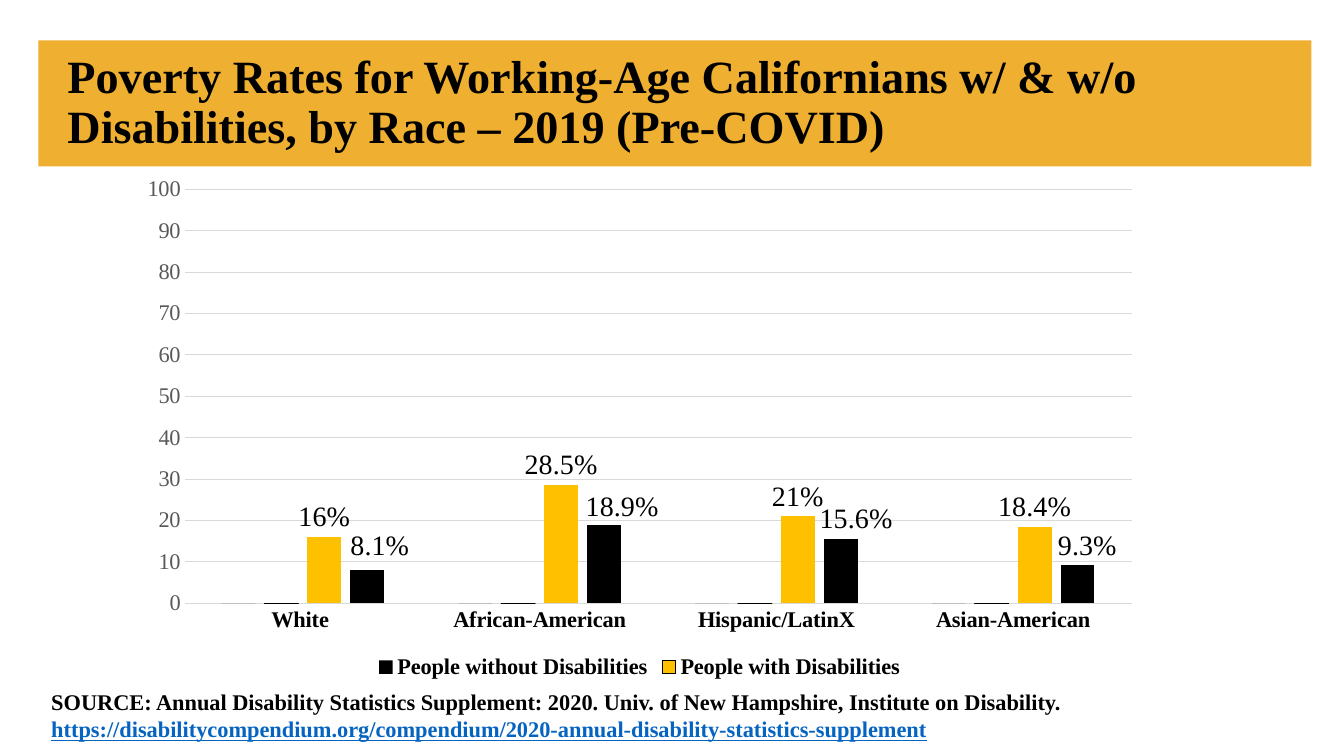
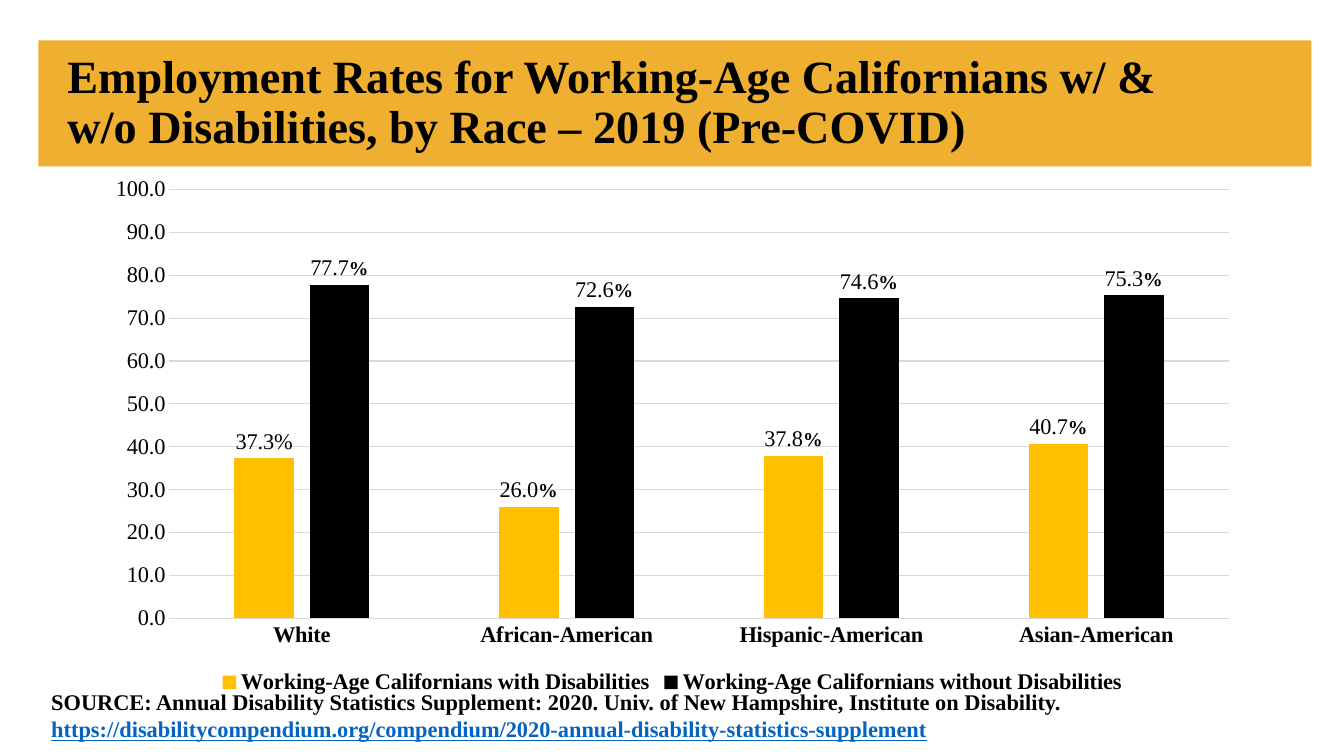
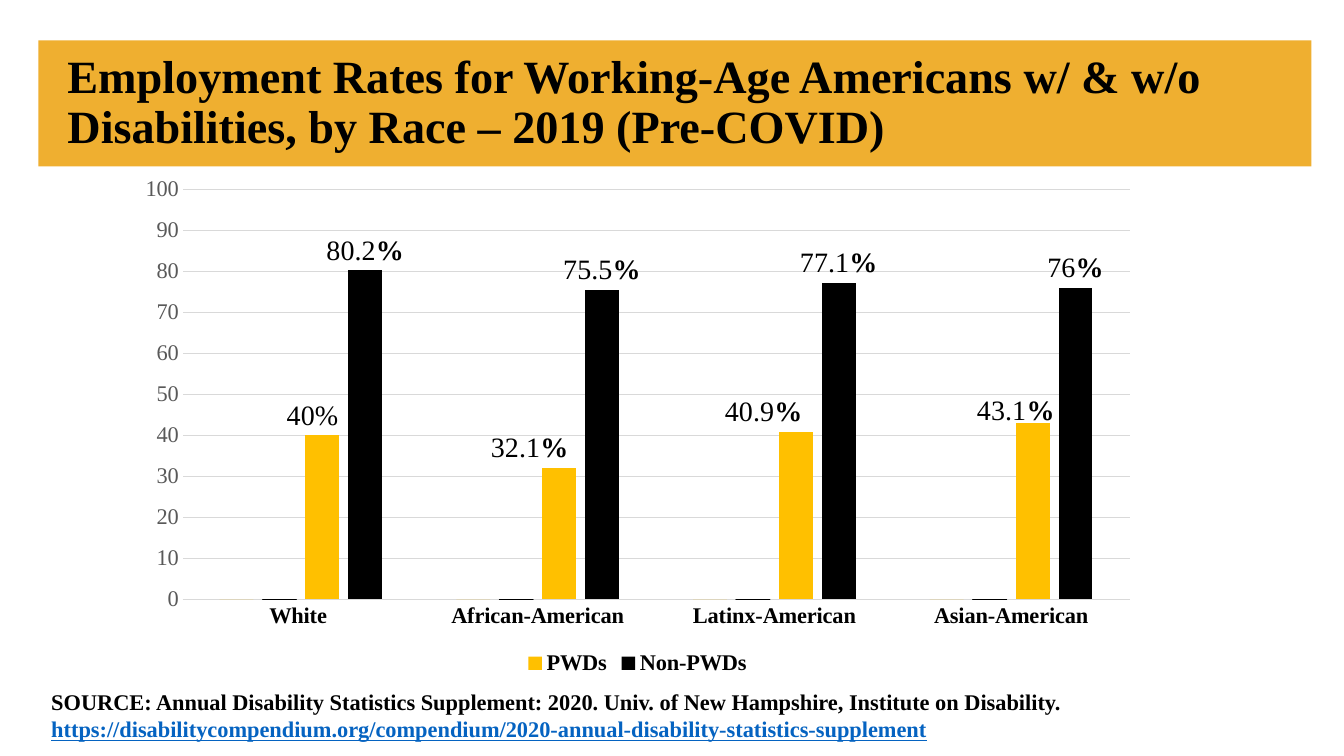
from dataclasses import dataclass, field

from lxml import etree
from pptx import Presentation
from pptx.chart.data import CategoryChartData
from pptx.dml.color import RGBColor
from pptx.enum.chart import XL_CHART_TYPE, XL_LABEL_POSITION, XL_LEGEND_POSITION, XL_TICK_MARK
from pptx.enum.shapes import MSO_SHAPE
from pptx.enum.text import MSO_ANCHOR, MSO_AUTO_SIZE, PP_ALIGN
from pptx.oxml import parse_xml
from pptx.oxml.ns import nsdecls, qn
from pptx.util import Pt

COLUMNS = XL_CHART_TYPE.COLUMN_CLUSTERED
OUTSIDE = XL_LABEL_POSITION.OUTSIDE_END
BOTTOM = XL_LEGEND_POSITION.BOTTOM
NO_TICK = XL_TICK_MARK.NONE
RECTANGLE = MSO_SHAPE.RECTANGLE
MIDDLE = MSO_ANCHOR.MIDDLE
NO_FIT = MSO_AUTO_SIZE.NONE
LEFT = PP_ALIGN.LEFT
TITLE_ONLY = 5


@dataclass(frozen=True)
class Theme:
    font: str = "Times New Roman"
    band: RGBColor = RGBColor(0xEF, 0xAF, 0x30)
    gold: RGBColor = RGBColor(0xFF, 0xC0, 0x00)
    black: RGBColor = RGBColor(0x00, 0x00, 0x00)
    gray: RGBColor = RGBColor(0x59, 0x59, 0x59)
    grid: RGBColor = RGBColor(0xD9, 0xD9, 0xD9)
    link: RGBColor = RGBColor(0x05, 0x63, 0xC1)
    title_size: int = 33
    text_size: int = 16
    hairline: float = 0.75


THEME = Theme()


@dataclass
class Bars:
    name: str
    values: tuple
    color: RGBColor
    outlined: bool = False
    nudges: dict = field(default_factory=dict)

    @property
    def is_empty(self):
        return not any(self.values)


@dataclass
class RateChart:
    title: str
    frame: tuple
    categories: tuple
    bars: tuple
    hidden_entries: tuple = ()
    axis_color: RGBColor = THEME.gray
    number_format: str = "General"
    label_format: str = "{:g}"
    label_size: int = 20
    sign_size: int = 20
    bold_signs: bool = True


class RateDeck:
    def __init__(self, theme):
        self.theme = theme
        self.deck = Presentation()
        self.deck.slide_width, self.deck.slide_height = Pt(960), Pt(540)
        self.page = None

    def style(self, font, size, color=None, bold=False):
        font.name = self.theme.font
        font.size = Pt(size)
        font.bold = bold
        font.color.rgb = color or self.theme.black

    def add_page(self, title):
        self.page = self.deck.slides.add_slide(self.deck.slide_layouts[TITLE_ONLY])
        self.add_band()
        box = self.page.shapes.title
        box.left, box.top, box.width, box.height = Pt(41), Pt(28.8), Pt(828), Pt(90)
        frame = box.text_frame
        frame.text = title
        frame.word_wrap = True
        frame.auto_size = NO_FIT
        frame.vertical_anchor = MIDDLE
        para = frame.paragraphs[0]
        para.alignment = LEFT
        para.line_spacing = 0.9
        self.style(para.font, self.theme.title_size, bold=True)

    def add_band(self):
        shapes = self.page.shapes
        band = shapes.add_shape(RECTANGLE, Pt(27.4), Pt(28.8), Pt(909.4), Pt(90))
        band.shadow.inherit = False
        band.fill.solid()
        band.fill.fore_color.rgb = self.theme.band
        band.line.fill.background()
        shapes.title._element.addprevious(band._element)

    def add_source(self, citation, address):
        box = self.page.shapes.add_textbox(Pt(29.5), Pt(488.2), Pt(930.2), Pt(50))
        frame = box.text_frame
        frame.word_wrap = True
        frame.text = f"{citation}\n{address}"
        for para, color in zip(frame.paragraphs, (self.theme.black, self.theme.link)):
            self.style(para.font, self.theme.text_size, color, bold=True)
        frame.paragraphs[1].font.underline = True

    def add_chart(self, rates):
        data = CategoryChartData(number_format=rates.number_format)
        data.categories = rates.categories
        for bars in rates.bars:
            data.add_series(bars.name, bars.values)
        frame = [Pt(length) for length in rates.frame]
        chart = self.page.shapes.add_chart(COLUMNS, *frame, data).chart
        chart.has_title = False
        self.style(chart.font, self.theme.text_size)
        plot = chart.plots[0]
        plot.gap_width, plot.overlap, plot.vary_by_categories = 219, -27, False
        self.format_axes(chart, rates)
        self.format_legend(chart, rates.hidden_entries)
        first = True
        for series, bars in zip(plot.series, rates.bars):
            series.format.fill.solid()
            series.format.fill.fore_color.rgb = bars.color
            series.invert_if_negative = False
            if bars.outlined:
                self.draw_line(series.format.line, self.theme.black)
            if not bars.is_empty:
                self.label_bars(series, bars, rates, first)
                first = False

    def draw_line(self, line, color):
        line.color.rgb = color
        line.width = Pt(self.theme.hairline)

    def format_axes(self, chart, rates):
        size = self.theme.text_size
        for axis in (chart.category_axis, chart.value_axis):
            axis.major_tick_mark = axis.minor_tick_mark = NO_TICK
        self.style(chart.category_axis.tick_labels.font, size, bold=True)
        self.draw_line(chart.category_axis.format.line, self.theme.grid)
        axis = chart.value_axis
        axis.minimum_scale, axis.maximum_scale, axis.major_unit = 0, 100, 10
        axis.format.line.fill.background()
        self.draw_line(axis.major_gridlines.format.line, self.theme.grid)
        self.style(axis.tick_labels.font, size, rates.axis_color)
        axis.tick_labels.number_format = rates.number_format
        axis.tick_labels.number_format_is_linked = False

    def format_legend(self, chart, hidden_entries):
        chart.has_legend = True
        legend = chart.legend
        legend.position = BOTTOM
        legend.include_in_layout = False
        self.style(legend.font, self.theme.text_size, bold=True)
        anchor = legend._element.find(qn("c:legendPos"))
        for index in reversed(hidden_entries):
            entry = etree.Element(qn("c:legendEntry"))
            etree.SubElement(entry, qn("c:idx")).set("val", str(index))
            etree.SubElement(entry, qn("c:delete")).set("val", "1")
            anchor.addnext(entry)

    def label_bars(self, series, bars, rates, first):
        for index, value in enumerate(bars.values):
            label = series.points[index].data_label
            para = label.text_frame.paragraphs[0]
            bold_sign = rates.bold_signs and not (first and index == 0)
            sign_size = rates.sign_size if bold_sign else rates.label_size
            for text, size, bold in (
                (rates.label_format.format(value), rates.label_size, False),
                ("%", sign_size, bold_sign),
            ):
                span = para.add_run()
                span.text = text
                self.style(span.font, size, bold=bold)
            label.position = OUTSIDE
            if index in bars.nudges:
                self.nudge(label, bars.nudges[index], rates.frame[2:])
        labels = series.data_labels
        labels.show_value = True
        labels.position = OUTSIDE
        self.style(labels.font, rates.label_size, bold=True)

    def nudge(self, label, offset, extent):
        x, y = (round(move / length, 4) for move, length in zip(offset, extent))
        layout = parse_xml(
            f'<c:layout {nsdecls("c")}><c:manualLayout>'
            f'<c:x val="{x}"/><c:y val="{y}"/></c:manualLayout></c:layout>'
        )
        element = label._get_or_add_dLbl()
        for old in element.findall(qn("c:layout")):
            element.remove(old)
        element.find(qn("c:idx")).addnext(layout)


CITATION = (
    "SOURCE: Annual Disability Statistics Supplement: 2020. "
    "Univ. of New Hampshire, Institute on Disability."
)
ADDRESS = "https://disabilitycompendium.org/compendium/2020-annual-disability-statistics-supplement"
TITLE = "{} w/ & w/o Disabilities, by Race – 2019 (Pre-COVID)"
ZEROS = (0, 0, 0, 0)

CHARTS = (
    RateChart(
        title=TITLE.format("Poverty Rates for Working-Age Californians"),
        frame=(90.7, 118.8, 732.2, 370),
        categories=("White ", "African-American", "Hispanic/LatinX", "Asian-American"),
        bars=(
            Bars("People without Disabilities", ZEROS, THEME.black),
            Bars("People with Disabilities", ZEROS, THEME.gold, outlined=True),
            Bars("Series 3", (16, 28.5, 21, 18.4), THEME.gold),
            Bars("Series 4", (8.1, 18.9, 15.6, 9.3), THEME.black,
                 nudges={0: (9, -3), 1: (13, 1), 2: (11, 0), 3: (7, 1)}),
        ),
        hidden_entries=(2, 3),
        bold_signs=False,
    ),
    RateChart(
        title=TITLE.format("Employment Rates for Working-Age Californians"),
        frame=(66.2, 118.8, 828, 380.9),
        categories=("White", "African-American", "Hispanic-American", "Asian-American"),
        bars=(
            Bars("Working-Age Californians with Disabilities",
                 (37.3, 26, 37.8, 40.7), THEME.gold),
            Bars("Working-Age Californians without Disabilities",
                 (77.7, 72.6, 74.6, 75.3), THEME.black),
        ),
        axis_color=THEME.black,
        number_format="0.0",
        label_format="{:.1f}",
        label_size=16,
        sign_size=14,
    ),
    RateChart(
        title=TITLE.format("Employment Rates for Working-Age Americans"),
        frame=(89.3, 118.8, 732.2, 367.2),
        categories=("White ", "African-American", "Latinx-American", "Asian-American"),
        bars=(
            Bars("Series 1", ZEROS, THEME.gold),
            Bars("Series 2", ZEROS, THEME.black, outlined=True),
            Bars("PWDs", (40, 32.1, 40.9, 43.1), THEME.gold,
                 nudges={0: (-7, 0), 1: (-21, 0), 2: (-23, 0), 3: (-12, 6)}),
            Bars("Non-PWDs", (80.2, 75.5, 77.1, 76), THEME.black),
        ),
        hidden_entries=(0, 1),
    ),
)


def main():
    rate_deck = RateDeck(THEME)
    for rates in CHARTS:
        rate_deck.add_page(rates.title)
        rate_deck.add_source(CITATION, ADDRESS)
        rate_deck.add_chart(rates)
    rate_deck.deck.save("out.pptx")


if __name__ == "__main__":
    main()
